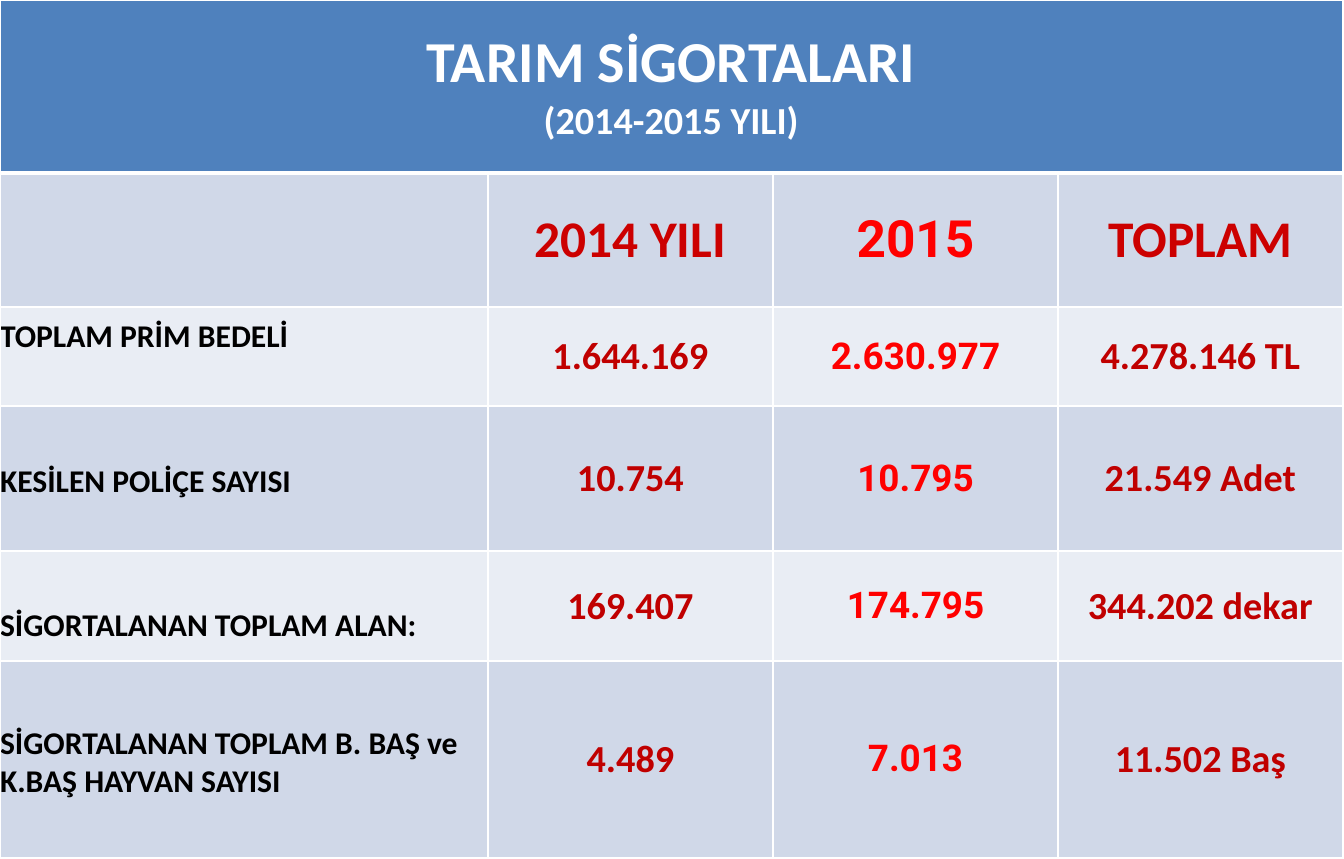
from lxml import etree
from pptx import Presentation
from pptx.dml.color import RGBColor
from pptx.enum.text import MSO_ANCHOR, PP_ALIGN
from pptx.oxml.ns import qn
from pptx.util import Pt

MIDDLE = MSO_ANCHOR.MIDDLE
LEFT, CENTER = PP_ALIGN.LEFT, PP_ALIGN.CENTER

EMU_PER_PX = 914400 / 94.8
SLIDE_SIZE = (1344, 859)
COLUMN_WIDTHS = (488, 285, 285, 285)
ROW_HEIGHTS = (173, 134, 99, 145, 110, 197)

TITLE = "TARIM SİGORTALARI"
SUBTITLE = "(2014-2015 YILI)"
ROWS = [
    ("", "2014 YILI", "2015", "TOPLAM"),
    ("TOPLAM PRİM BEDELİ", "1.644.169", "2.630.977", "4.278.146 TL"),
    ("KESİLEN POLİÇE SAYISI", "10.754", "10.795", "21.549 Adet"),
    ("SİGORTALANAN TOPLAM ALAN:", "169.407", "174.795", "344.202 dekar"),
    ("SİGORTALANAN TOPLAM B. BAŞ ve K.BAŞ HAYVAN SAYISI", "4.489", "7.013", "11.502 Baş"),
]
LABEL_MARGINS = {2: (0, 39), 3: (7, 0), 4: (39, 0), 5: (7, 0)}

BACKGROUND = "EEECE1"
HEADER_FILL = "4F81BD"
BAND_FILLS = ("E9EDF4", "D0D8E8")
WHITE = "FFFFFF"

TITLE_FORMAT = {"size": 44, "name": "Calibri", "color": WHITE}
SUBTITLE_FORMAT = {"size": 29, "name": "Calibri", "color": WHITE}
LABEL_FORMAT = {"size": 24, "name": "Calibri", "color": "000000"}
HEADING_FORMAT = {"size": 39, "name": "Calibri", "color": "CC0000"}
HEADING_2015_FORMAT = {"size": 39, "name": "Roboto", "color": "FF0000"}
VALUE_FORMAT = {"size": 29, "name": "Calibri", "color": "C00000"}
VALUE_2015_FORMAT = {"size": 28, "name": "Roboto", "color": "FF0000"}
COLUMN_2015 = 2


def px(length):
    return round(length * EMU_PER_PX)


def rgb(value):
    return RGBColor.from_string(value)


def set_borders(cell, top, bottom):
    properties = cell._tc.get_or_add_tcPr()
    widths = {"a:lnL": 1, "a:lnR": 1, "a:lnT": top, "a:lnB": bottom}
    for position, (tag, width) in enumerate(widths.items()):
        line = etree.Element(qn(tag), w=str(Pt(width)))
        fill = etree.SubElement(line, qn("a:solidFill"))
        etree.SubElement(fill, qn("a:srgbClr"), val=WHITE)
        properties.insert(position, line)


def style_cell(cell, fill, margins=(0, 0), top=1, bottom=1):
    cell.fill.solid()
    cell.fill.fore_color.rgb = rgb(fill)
    layout = {
        "margin_left": 0,
        "margin_right": 0,
        "margin_top": px(margins[0]),
        "margin_bottom": px(margins[1]),
        "vertical_anchor": MIDDLE,
    }
    for name, value in layout.items():
        setattr(cell, name, value)
    set_borders(cell, top, bottom)


def write(paragraph, text, text_format, alignment):
    paragraph.alignment = alignment
    run = paragraph.add_run()
    run.text = text
    font = {"size": Pt(text_format["size"]), "name": text_format["name"], "bold": True}
    for name, value in font.items():
        setattr(run.font, name, value)
    run.font.color.rgb = rgb(text_format["color"])


def text_format_for(row, column):
    if column == 0:
        return LABEL_FORMAT
    if row == 1:
        return HEADING_2015_FORMAT if column == COLUMN_2015 else HEADING_FORMAT
    return VALUE_2015_FORMAT if column == COLUMN_2015 else VALUE_FORMAT


def add_insurance_table(slide):
    table = slide.shapes.add_table(
        len(ROW_HEIGHTS), len(COLUMN_WIDTHS), 0, 0,
        px(sum(COLUMN_WIDTHS)), px(sum(ROW_HEIGHTS)),
    ).table
    table.first_row = False
    table.horz_banding = False
    for column, width in zip(table.columns, COLUMN_WIDTHS):
        column.width = px(width)
    for row, height in zip(table.rows, ROW_HEIGHTS):
        row.height = px(height)

    for cell in table.rows[0].cells:
        style_cell(cell, HEADER_FILL, bottom=3)
    header = table.cell(0, 0)
    header.merge(table.cell(0, len(COLUMN_WIDTHS) - 1))
    write(header.text_frame.paragraphs[0], TITLE, TITLE_FORMAT, CENTER)
    write(header.text_frame.add_paragraph(), SUBTITLE, SUBTITLE_FORMAT, CENTER)

    for row, texts in enumerate(ROWS, start=1):
        for column, text in enumerate(texts):
            cell = table.cell(row, column)
            margins = LABEL_MARGINS.get(row, (0, 0)) if column == 0 else (0, 0)
            style_cell(cell, BAND_FILLS[row % 2], margins, top=3 if row == 1 else 1)
            if text:
                alignment = LEFT if column == 0 else CENTER
                write(cell.text_frame.paragraphs[0], text, text_format_for(row, column), alignment)


def main():
    presentation = Presentation()
    presentation.slide_width, presentation.slide_height = map(px, SLIDE_SIZE)
    slide = presentation.slides.add_slide(presentation.slide_layouts[6])
    slide.background.fill.solid()
    slide.background.fill.fore_color.rgb = rgb(BACKGROUND)
    add_insurance_table(slide)
    presentation.save("out.pptx")


if __name__ == "__main__":
    main()
